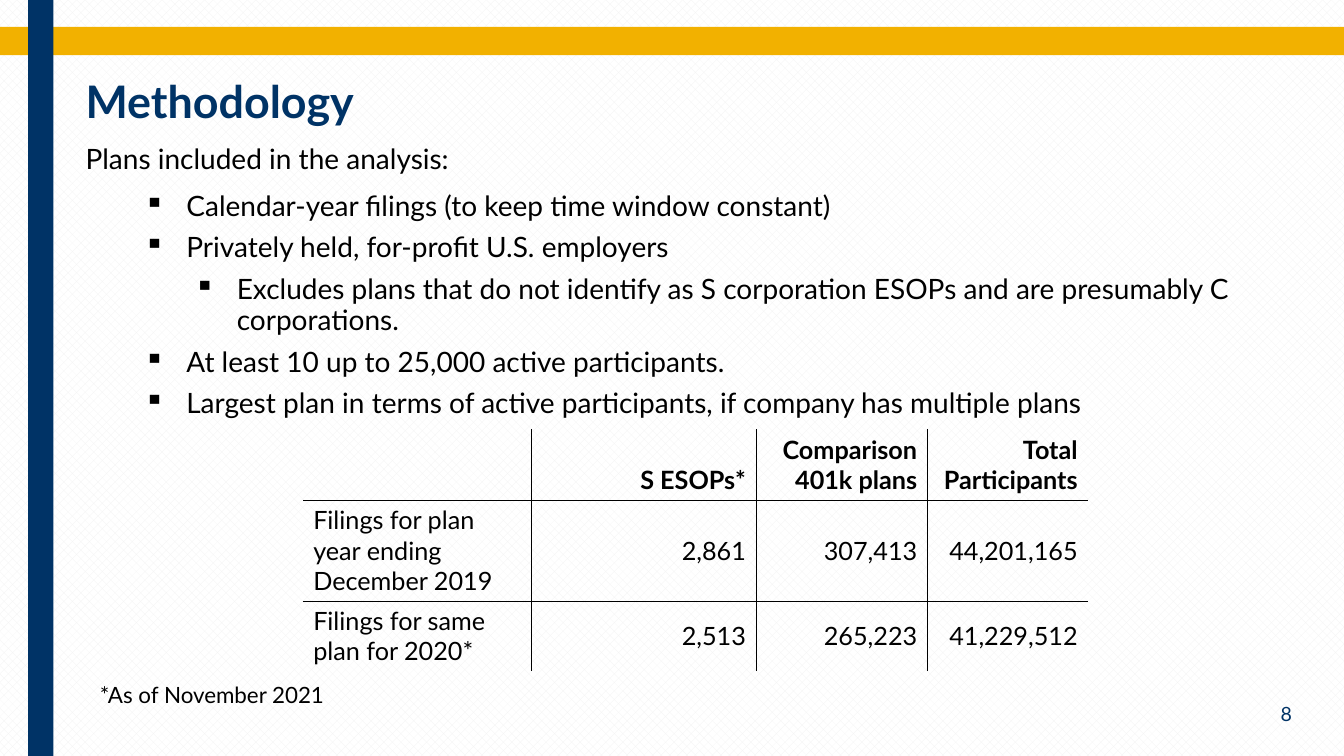
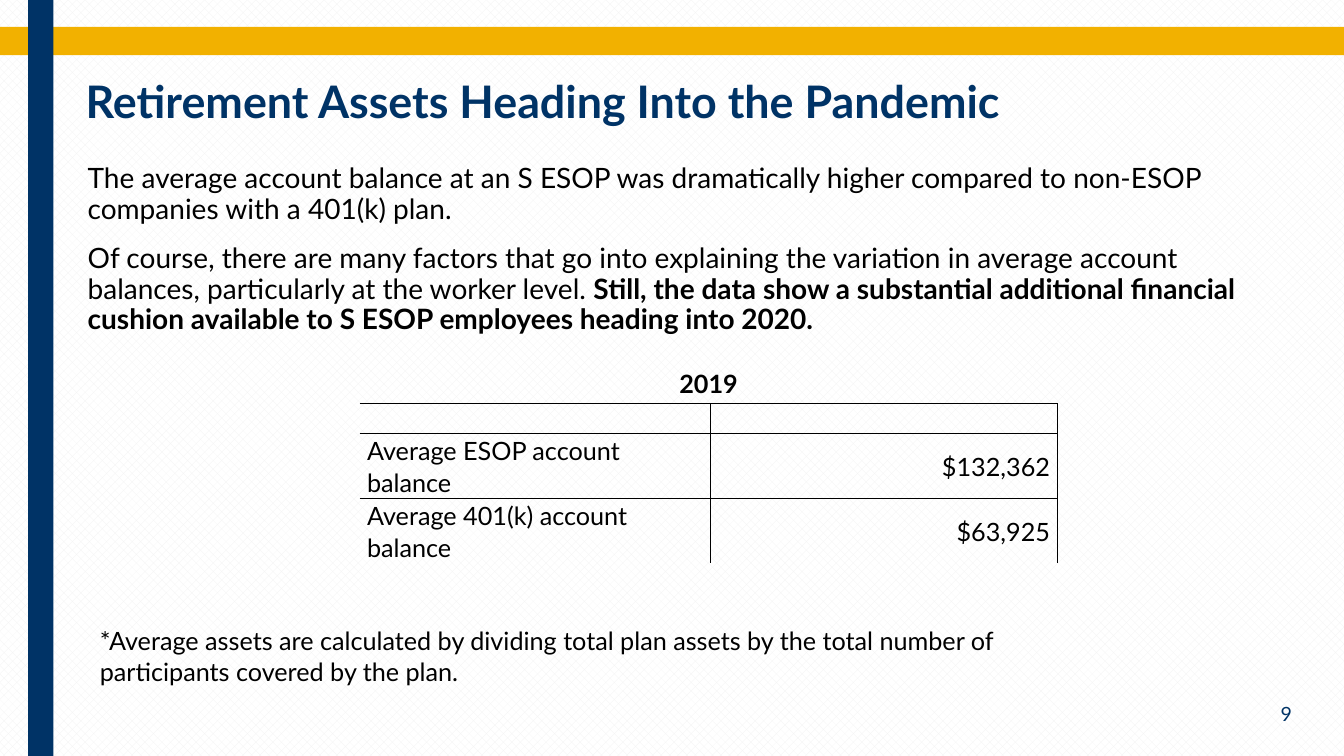
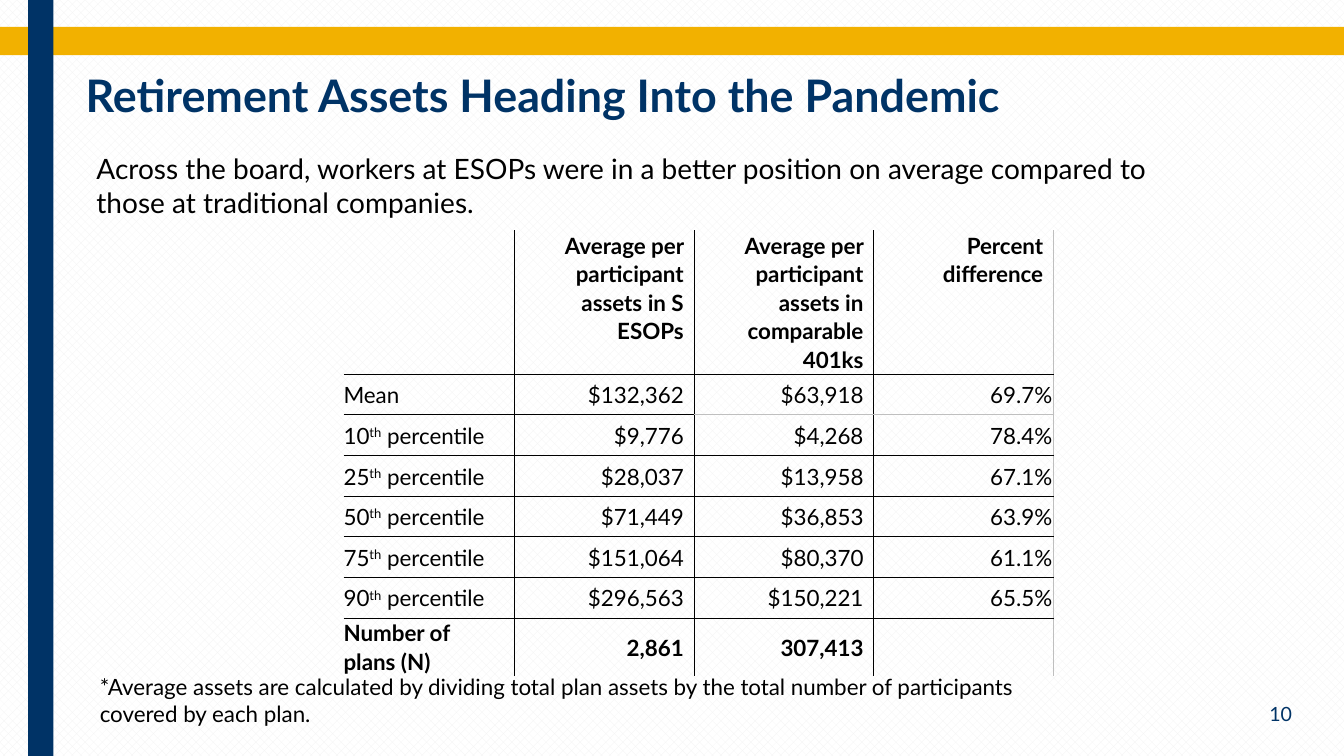
from dataclasses import dataclass, field
from typing import Optional, Union

from lxml.etree import SubElement
from pptx import Presentation
from pptx.dml.color import RGBColor
from pptx.enum.dml import MSO_PATTERN
from pptx.enum.shapes import MSO_SHAPE
from pptx.enum.text import MSO_ANCHOR, PP_ALIGN
from pptx.oxml.ns import qn
from pptx.util import Emu, Inches, Pt

WIDTH, HEIGHT = Inches(13.33), Inches(7.5)
COLUMNS, ROWS = 160, 90
NO_STYLE_NO_GRID = "{2D5ABB26-0587-4C30-8999-92F81FD0307C}"


@dataclass(frozen=True)
class Theme:
    font: str = "Lato"
    navy: str = "003366"
    gold: str = "F2B100"
    ink: str = "000000"
    grey: str = "BFBFBF"
    paper: str = "FFFFFF"
    weave: str = "F2F2F2"
    title: int = 32
    body: int = 20
    table: int = 18
    small: int = 16
    number: int = 14


THEME = Theme()


@dataclass(frozen=True)
class Frame:
    """A place on the slide, in columns and rows of the grid."""
    left: float
    top: float
    width: float
    height: float


@dataclass(frozen=True)
class Span:
    text: str
    bold: bool = False
    raised: bool = False


Words = Union[str, list[Span]]


@dataclass(frozen=True)
class Para:
    words: Words
    level: int = 0
    before: float = 0
    after: float = 0


@dataclass(frozen=True)
class TextStyle:
    size: int
    color: str = THEME.ink
    bold: bool = False
    align: PP_ALIGN = PP_ALIGN.LEFT
    anchor: MSO_ANCHOR = MSO_ANCHOR.TOP
    spacing: float = 1
    margin: Optional[float] = None


@dataclass(frozen=True)
class Line:
    color: str
    points: float


RULE = Line(THEME.ink, 0.25)
GREY_RULE = Line(THEME.grey, 1)


@dataclass(frozen=True)
class Grid:
    """A table: its first column is left-aligned, the others right-aligned."""
    left: float
    top: float
    widths: list[float]
    heights: list[float]
    cells: list[list[Words]]
    size: int = THEME.table
    spacing: float = 1
    header_anchor: MSO_ANCHOR = MSO_ANCHOR.MIDDLE
    bold_rows: tuple[int, ...] = (0,)
    side_margins: tuple[float, float] = (1.2, 1.2)
    vertical_margin: float = 0
    last_margin: Optional[float] = None
    merged_header: bool = False
    outer_right: Optional[Line] = None
    grey_below: frozenset = field(default_factory=frozenset)

    def right_of(self, row: int, column: int) -> Optional[Line]:
        if self.merged_header and row == 0:
            return None
        return self.outer_right if column == len(self.widths) - 1 else RULE

    def below(self, row: int, column: int) -> Optional[Line]:
        if row == len(self.heights) - 1:
            return None
        return GREY_RULE if (row, column) in self.grey_below else RULE


def across(columns: float) -> Emu:
    return Emu(round(WIDTH * columns / COLUMNS))


def down(rows: float) -> Emu:
    return Emu(round(HEIGHT * rows / ROWS))


def place(frame: Frame) -> tuple[Emu, Emu, Emu, Emu]:
    return across(frame.left), down(frame.top), across(frame.width), down(frame.height)


def add_words(para, words: Words, style: TextStyle) -> None:
    for part in [Span(words)] if isinstance(words, str) else words:
        span = para.add_run()
        span.text = part.text
        span.font.name = THEME.font
        span.font.size = Pt(style.size)
        span.font.bold = style.bold or part.bold
        span.font.color.rgb = RGBColor.from_string(style.color)
        if part.raised:
            span._r.get_or_add_rPr().set("baseline", "30000")


def add_bullet(para, level: int) -> None:
    properties = para._p.get_or_add_pPr()
    properties.set("marL", str(Inches(0.5 + 0.5 * level)))
    properties.set("indent", str(Inches(-0.42)))
    SubElement(properties, qn("a:buChar")).set("char", "▪")


def add_text(slide, frame: Frame, style: TextStyle, paras: list[Para]) -> None:
    box = slide.shapes.add_textbox(*place(frame)).text_frame
    box.word_wrap = True
    box.vertical_anchor = style.anchor
    if style.margin is not None:
        box.margin_left = box.margin_right = across(style.margin)
        box.margin_top = box.margin_bottom = down(style.margin)
    for index, item in enumerate(paras):
        para = box.add_paragraph() if index else box.paragraphs[0]
        if item.level:
            add_bullet(para, item.level)
        para.alignment = style.align
        para.line_spacing = style.spacing
        para.space_before = Pt(item.before)
        para.space_after = Pt(item.after)
        add_words(para, item.words, style)


def add_band(slide, frame: Frame, color: str) -> None:
    band = slide.shapes.add_shape(MSO_SHAPE.RECTANGLE, *place(frame))
    band.shadow.inherit = False
    band.fill.solid()
    band.fill.fore_color.rgb = RGBColor.from_string(color)
    band.line.fill.background()


def add_border(cell, edge: str, line: Optional[Line]) -> None:
    border = SubElement(cell._tc.get_or_add_tcPr(), qn(f"a:ln{edge}"))
    if line is None:
        border.set("w", "0")
        SubElement(border, qn("a:noFill"))
    else:
        border.set("w", str(Pt(line.points)))
        fill = SubElement(border, qn("a:solidFill"))
        SubElement(fill, qn("a:srgbClr")).set("val", line.color)


def fill_cell(cell, grid: Grid, row: int, column: int) -> None:
    header, last = row == 0, column == len(grid.widths) - 1
    left, right = grid.side_margins
    if last and not header and grid.last_margin is not None:
        right = grid.last_margin
    cell.margin_left, cell.margin_right = across(left), across(right)
    cell.margin_top = cell.margin_bottom = down(grid.vertical_margin)
    cell.vertical_anchor = grid.header_anchor if header else MSO_ANCHOR.MIDDLE
    add_border(cell, "L", grid.right_of(row, column - 1) if column else None)
    add_border(cell, "R", grid.right_of(row, column))
    add_border(cell, "T", grid.below(row - 1, column) if row else None)
    add_border(cell, "B", grid.below(row, column))
    cell.fill.background()
    words = grid.cells[row][column]
    if words:
        para = cell.text_frame.paragraphs[0]
        para.line_spacing = grid.spacing
        para.alignment = PP_ALIGN.RIGHT if column else PP_ALIGN.LEFT
        if header and grid.merged_header:
            para.alignment = PP_ALIGN.CENTER
        add_words(para, words, TextStyle(grid.size, bold=row in grid.bold_rows))


def add_grid(slide, grid: Grid) -> None:
    frame = Frame(grid.left, grid.top, sum(grid.widths), sum(grid.heights))
    table = slide.shapes.add_table(len(grid.heights), len(grid.widths), *place(frame)).table
    table.first_row = table.horz_banding = False
    table._tbl.tblPr.find(qn("a:tableStyleId")).text = NO_STYLE_NO_GRID
    for column, width in zip(table.columns, grid.widths):
        column.width = across(width)
    for row, height in zip(table.rows, grid.heights):
        row.height = down(height)
    if grid.merged_header:
        table.cell(0, 0).merge(table.cell(0, len(grid.widths) - 1))
    for row in range(len(grid.heights)):
        for column in range(len(grid.widths)):
            fill_cell(table.cell(row, column), grid, row, column)


def add_slide(deck, title: str, number: int, title_top: float = 9):
    """Add a blank slide with the shared bands, title and page number."""
    slide = deck.slides.add_slide(deck.slide_layouts[6])
    paper = slide.background.fill
    paper.patterned()
    paper.pattern = MSO_PATTERN.from_xml("pct40")
    paper.fore_color.rgb = RGBColor.from_string(THEME.weave)
    paper.back_color.rgb = RGBColor.from_string(THEME.paper)
    add_band(slide, Frame(0, 3.2, COLUMNS, 3.36), THEME.gold)
    add_band(slide, Frame(3.36, 0, 3, ROWS), THEME.navy)
    add_text(slide, Frame(9, title_top, 126, 8.5),
             TextStyle(THEME.title, THEME.navy, bold=True, spacing=0.89), [Para(title)])
    add_text(slide, Frame(134, 82.3, 21, 5.3),
             TextStyle(THEME.number, THEME.navy, align=PP_ALIGN.RIGHT, anchor=MSO_ANCHOR.MIDDLE),
             [Para(str(number))])
    return slide


def add_footnote(slide, top: float, height: float, size: int, text: str) -> None:
    add_text(slide, Frame(10.7, top, 118.8, height), TextStyle(size), [Para(text)])


def build_methodology(deck) -> None:
    slide = add_slide(deck, "Methodology", 8)
    bullets = [
        (1, "Calendar-year filings (to keep time window constant)"),
        (1, "Privately held, for-profit U.S. employers"),
        (2, "Excludes plans that do not identify as S corporation ESOPs and are "
            "presumably C corporations."),
        (1, "At least 10 up to 25,000 active participants."),
        (1, "Largest plan in terms of active participants, if company has multiple plans"),
    ]
    add_text(slide, Frame(9, 16.56, 148.4, 63.5), TextStyle(THEME.body, spacing=0.94),
             [Para("Plans included in the analysis:", after=6)]
             + [Para(text, level, before=5, after=2) for level, text in bullets])
    add_grid(slide, Grid(
        36.1, 51.1, [27.1, 26.8, 20.4, 19.1], [8.4, 12, 8.4],
        [["", "S ESOPs*", "Comparison 401k plans", "Total Participants"],
         ["Filings for plan year ending December 2019", "2,861", "307,413", "44,201,165"],
         ["Filings for same plan for 2020*", "2,513", "265,223", "41,229,512"]],
        header_anchor=MSO_ANCHOR.BOTTOM, vertical_margin=0.6))
    add_footnote(slide, 80.5, 4.4, THEME.small, "*As of November 2021")


def build_balances(deck) -> None:
    slide = add_slide(deck, "Retirement Assets Heading Into the Pandemic", 9)
    add_grid(slide, Grid(
        42.8, 43.2, [41.8, 41.3], [4.8, 3.6, 7.7, 7.7],
        [["2019", ""],
         ["", ""],
         ["Average ESOP account balance", "$132,362"],
         ["Average 401(k) account balance", "$63,925"]],
        spacing=1.07, side_margins=(0.9, 0.9), merged_header=True, outer_right=RULE))
    add_text(slide, Frame(9.84, 19, 145.2, 63),
             TextStyle(THEME.body, spacing=0.9, margin=0.6), [
        Para("The average account balance at an S ESOP was dramatically higher compared to "
             "non-ESOP companies with a 401(k) plan.", after=2),
        Para([Span("Of course, there are many factors that go into explaining the variation in "
                   "average account balances, particularly at the worker level. "),
              Span("Still, the data show a substantial additional financial cushion available "
                   "to S ESOP employees heading into 2020.", bold=True)], before=12, after=2),
    ])
    add_footnote(slide, 73.9, 8.5, THEME.table,
                 "*Average assets are calculated by dividing total plan assets by the total "
                 "number of participants covered by the plan.")


def build_percentiles(deck) -> None:
    slide = add_slide(deck, "Retirement Assets Heading Into the Pandemic", 10, title_top=8.2)
    percentiles = [
        ("10", "$9,776", "$4,268", "78.4%"),
        ("25", "$28,037", "$13,958", "67.1%"),
        ("50", "$71,449", "$36,853", "63.9%"),
        ("75", "$151,064", "$80,370", "61.1%"),
        ("90", "$296,563", "$150,221", "65.5%"),
    ]
    add_grid(slide, Grid(
        40.9, 27.4, [20.3] + [21.4] * 3, [17.1] + [4.84] * 6 + [6.9],
        [["", "Average per participant assets in S ESOPs",
          "Average per participant assets in comparable 401ks", "Percent difference"],
         ["Mean", "$132,362", "$63,918", "69.7%"],
         *[[[Span(rank), Span("th", raised=True), Span(" percentile")], *values]
           for rank, *values in percentiles],
         ["Number of plans (N)", "2,861", "307,413", ""]],
        size=THEME.small, spacing=1.07, header_anchor=MSO_ANCHOR.TOP, bold_rows=(0, 7),
        side_margins=(0, 1.2), last_margin=0.12, outer_right=GREY_RULE,
        grey_below=frozenset({(1, 2), (1, 3)})))
    add_footnote(slide, 79.6, 7.7, THEME.small,
                 "*Average assets are calculated by dividing total plan assets by the total "
                 "number of participants covered by each plan.")
    add_text(slide, Frame(10.3, 17.5, 136, 9.2), TextStyle(THEME.body),
             [Para("Across the board, workers at ESOPs were in a better position on average "
                   "compared to those at traditional companies.")])


def main() -> None:
    deck = Presentation()
    deck.slide_width, deck.slide_height = WIDTH, HEIGHT
    build_methodology(deck)
    build_balances(deck)
    build_percentiles(deck)
    deck.save("out.pptx")


if __name__ == "__main__":
    main()
